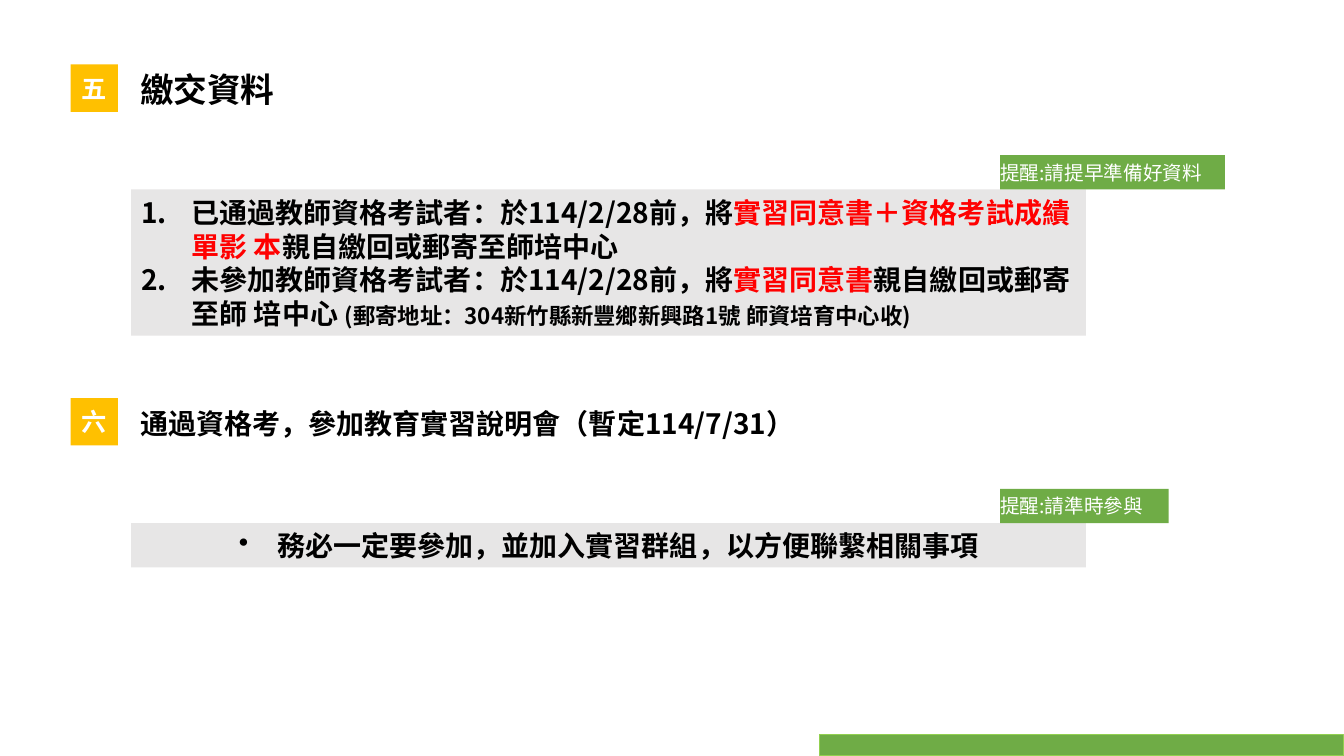
from lxml import etree
from pptx import Presentation
from pptx.dml.color import RGBColor
from pptx.enum.shapes import MSO_SHAPE
from pptx.enum.text import MSO_ANCHOR, MSO_AUTO_SIZE, PP_ALIGN
from pptx.oxml.ns import qn
from pptx.util import Inches, Pt

RECTANGLE = MSO_SHAPE.RECTANGLE
MIDDLE = MSO_ANCHOR.MIDDLE
NO_AUTOFIT = MSO_AUTO_SIZE.NONE
LEFT, CENTER = PP_ALIGN.LEFT, PP_ALIGN.CENTER

GREEN = RGBColor(0x6F, 0xAC, 0x46)
LIGHT_GREEN = RGBColor(0x92, 0xD0, 0x50)
AMBER = RGBColor(0xFF, 0xC0, 0x00)
GREY = RGBColor(0xE7, 0xE6, 0xE6)
RED = RGBColor(0xFF, 0x00, 0x00)
BLACK = RGBColor(0x00, 0x00, 0x00)
WHITE = RGBColor(0xFF, 0xFF, 0xFF)

FONT_TC = "Noto Sans CJK TC"
FONT_SC = "Noto Sans CJK SC"

SLIDE_WIDTH, SLIDE_HEIGHT = 13.33, 7.5
SECTION_TOP, SECTION_STEP = 0.64, 3.31

SUBMISSION_ITEMS = [
    [("已通過教師資格考試者：於114/2/28前，將", BLACK),
     ("實習同意書＋資格考試成績單影 本", RED),
     ("親自繳回或郵寄至師培中心", BLACK)],
    [("未參加教師資格考試者：於114/2/28前，將", BLACK),
     ("實習同意書", RED),
     ("親自繳回或郵寄至師 培中心 ", BLACK),
     ("(郵寄地址：304新竹縣新豐鄉新興路1號 師資培育中心收)", BLACK, 16, FONT_SC)],
]
BRIEFING_ITEMS = [[("務必一定要參加，並加入實習群組，以方便聯繫相關事項", BLACK)]]


def set_east_asian(properties, name):
    """Set the East Asian typeface right after the Latin one."""
    typeface = etree.Element(qn("a:ea"), typeface=name)
    properties.find(qn("a:latin")).addnext(typeface)


def format_paragraph(paragraph, size, color=None, bold=False, name=FONT_TC, align=LEFT):
    """Give a paragraph its alignment and font."""
    paragraph.alignment = align
    font = paragraph.font
    font.size, font.bold, font.name = Pt(size), bold, name
    if color is not None:
        font.color.rgb = color
    set_east_asian(paragraph._p.pPr.find(qn("a:defRPr")), name)


def prepare_frame(shape, left=0.0, right=0.0):
    """Wrap and centre the text vertically with the given side insets."""
    frame = shape.text_frame
    frame.auto_size = NO_AUTOFIT
    frame.word_wrap = True
    frame.vertical_anchor = MIDDLE
    frame.margin_left, frame.margin_right = Inches(left), Inches(right)
    frame.margin_top = frame.margin_bottom = 0
    return frame


def add_block(slide, left, top, width, height, fill):
    """Add a plain filled rectangle."""
    block = slide.shapes.add_shape(
        RECTANGLE, Inches(left), Inches(top), Inches(width), Inches(height))
    block.shadow.inherit = False
    block.fill.solid()
    block.fill.fore_color.rgb = fill
    block.line.fill.background()
    return block


def add_label(slide, left, top, width, height, fill, text, size, bold, align):
    """Add a filled rectangle with one white line of text."""
    label = add_block(slide, left, top, width, height, fill)
    paragraph = prepare_frame(label).paragraphs[0]
    paragraph.text = text
    format_paragraph(paragraph, size, WHITE, bold, align=align)


def add_bullet(paragraph, indent, hanging, tag, **marker):
    """Give a paragraph a hanging bullet or number."""
    properties = paragraph._p.get_or_add_pPr()
    properties.set("marL", str(Inches(indent)))
    properties.set("indent", str(-Inches(hanging)))
    etree.SubElement(properties, qn(tag), **marker)


def fill_items(frame, items, indent, hanging, tag, **marker):
    """Write list items made of coloured runs."""
    for index, item in enumerate(items):
        paragraph = frame.add_paragraph() if index else frame.paragraphs[0]
        paragraph.line_spacing = Pt(24)
        add_bullet(paragraph, indent, hanging, tag, **marker)
        format_paragraph(paragraph, 20, bold=True)
        for text, color, *special in item:
            run = paragraph.add_run()
            run.text = text
            run.font.color.rgb = color
            if special:
                size, name = special
                run.font.size, run.font.name = Pt(size), name
                set_east_asian(run._r.rPr, name)


def add_section(slide, top, number, heading, heading_text, heading_size, heading_font,
                reminder, reminder_width, panel_height, panel_inset):
    """Place badge, heading, reminder tab and panel; return the panel's frame."""
    add_label(slide, 0.7, top, 0.47, 0.47, AMBER, number, 18, True, CENTER)
    heading.left, heading.top = Inches(1.39), Inches(top + 0.03)
    heading.width, heading.height = Inches(7.01), Inches(0.43)
    title = prepare_frame(heading).paragraphs[0]
    title.text = heading_text
    format_paragraph(title, heading_size, BLACK, True, heading_font)
    panel = add_block(slide, 1.3, top + 1.24, 9.47, panel_height, GREY)
    add_label(slide, 9.92, top + 0.9, reminder_width, 0.34, GREEN,
              reminder, 14, False, LEFT)
    return prepare_frame(panel, panel_inset, 0.1)


def add_footer_bar(slide):
    """Place the green bar in the bottom right corner."""
    width, height = 5.2, 0.21
    bar = add_block(slide, SLIDE_WIDTH - width, SLIDE_HEIGHT - height,
                    width, height, GREEN)
    bar.line.color.rgb = LIGHT_GREEN
    bar.line.width = Pt(0.72)


def main():
    """Build and save the slide."""
    presentation = Presentation()
    presentation.slide_width = Inches(SLIDE_WIDTH)
    presentation.slide_height = Inches(SLIDE_HEIGHT)
    slide = presentation.slides.add_slide(presentation.slide_layouts[5])
    add_footer_bar(slide)

    submission = add_section(
        slide, SECTION_TOP, "五", slide.shapes.title, "繳交資料", 24, FONT_TC,
        "提醒:請提早準備好資料", 2.23, 1.45, 0.09)
    fill_items(submission, SUBMISSION_ITEMS, 0.51, 0.5,
               "a:buAutoNum", type="arabicPeriod")

    briefing_heading = slide.shapes.add_textbox(0, 0, 0, 0)
    briefing = add_section(
        slide, SECTION_TOP + SECTION_STEP, "六", briefing_heading,
        "通過資格考，參加教育實習說明會（暫定114/7/31）", 20, FONT_SC,
        "提醒:請準時參與", 1.67, 0.44, 1.06)
    fill_items(briefing, BRIEFING_ITEMS, 0.39, 0.38, "a:buChar", char="•")

    presentation.save("out.pptx")


if __name__ == "__main__":
    main()
